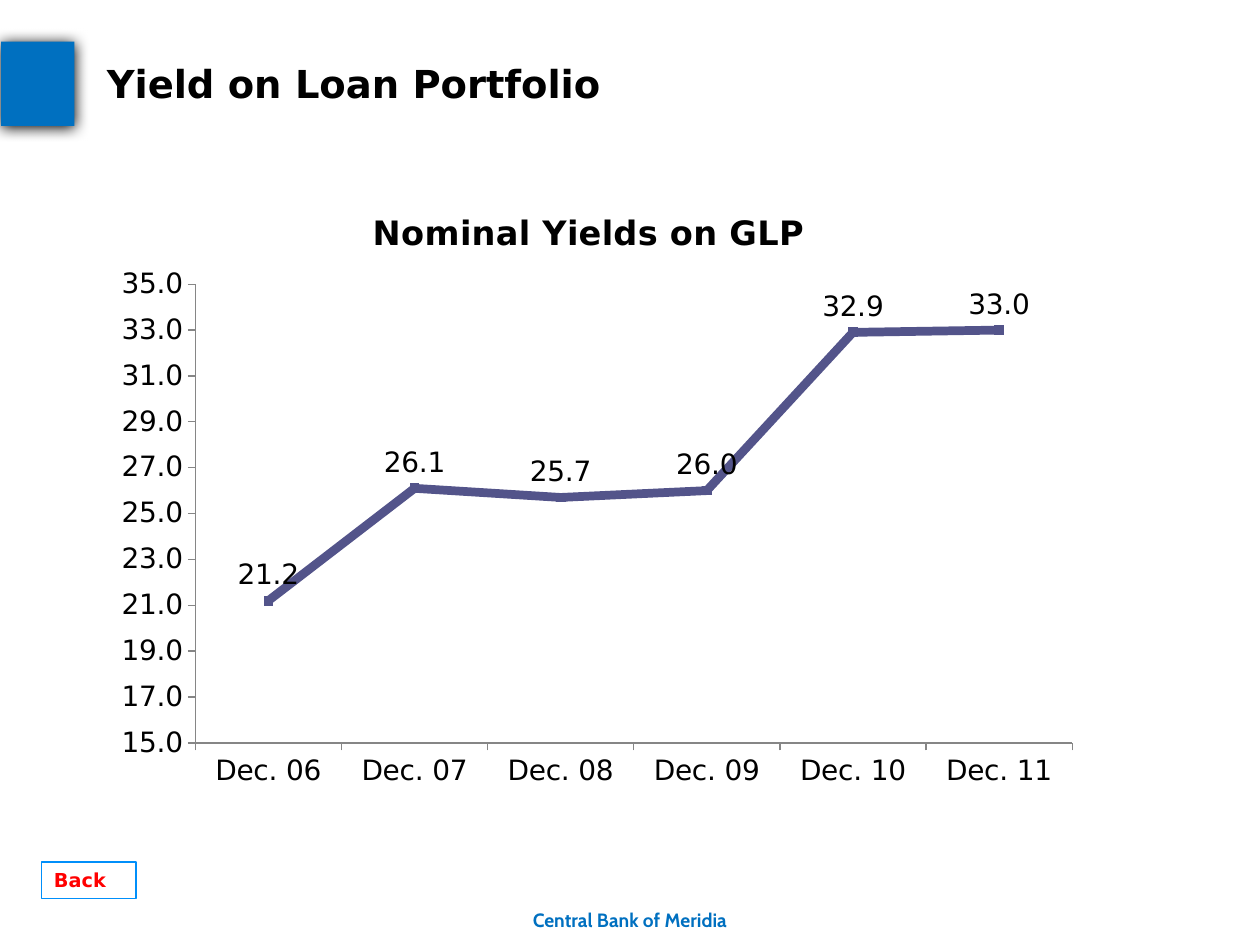
from pptx import Presentation
from pptx.chart.data import CategoryChartData
from pptx.dml.color import RGBColor
from pptx.enum.chart import XL_CHART_TYPE as ChartType
from pptx.enum.chart import XL_LABEL_POSITION as LabelPosition
from pptx.enum.chart import XL_MARKER_STYLE as MarkerStyle
from pptx.enum.chart import XL_TICK_MARK as TickMark
from pptx.enum.shapes import MSO_SHAPE as ShapeType
from pptx.enum.text import MSO_ANCHOR as Anchor
from pptx.enum.text import PP_ALIGN as Align
from pptx.oxml import parse_xml
from pptx.oxml.ns import nsdecls
from pptx.util import Inches, Pt

FONT = "DejaVu Sans"
BLACK, BLUE, SERIES, AXIS = "000000", "0070C0", "53548A", "868686"
NUMBER_FORMAT = "#,##0.0"


def color(value):
    return RGBColor.from_string(value)


def style_font(font, size, value, bold=False, name=FONT):
    font.name, font.size, font.bold = name, Pt(size), bold
    font.color.rgb = color(value)


def add_rectangle(slide, box, fill=None, line=None):
    shape = slide.shapes.add_shape(ShapeType.RECTANGLE, *map(Inches, box))
    shape.shadow.inherit = False
    if fill:
        shape.fill.solid()
        shape.fill.fore_color.rgb = color(fill)
    else:
        shape.fill.background()
    if line:
        shape.line.color.rgb = color(line)
        shape.line.width = Pt(0.75)
    else:
        shape.line.fill.background()
    return shape


def write(shape, text, size, value, anchor, align=Align.LEFT, name=FONT):
    frame = shape.text_frame
    frame.word_wrap = True
    frame.vertical_anchor = anchor
    paragraph = frame.paragraphs[0]
    paragraph.alignment = align
    run = paragraph.add_run()
    run.text = text
    style_font(run.font, size, value, True, name)


def add_footer(slide, box):
    shape = add_rectangle(slide, box, fill="FFFFFF")
    shape.text_frame.margin_top = Inches(0.15)
    write(shape, "Central Bank of Meridia", 11, BLUE, Anchor.MIDDLE, Align.CENTER, "Cabin")


def add_header(slide, box):
    left, top, width, height = box
    # Blue square with a soft shadow
    square = add_rectangle(slide, (left, top, 0.58, height), fill=BLUE)
    effects = square._element.spPr.find("{*}effectLst")
    effects.append(parse_xml(
        f'<a:outerShdw {nsdecls("a")} blurRad="{Pt(8.5)}" dist="{Pt(1)}" dir="5400000" '
        'rotWithShape="0"><a:srgbClr val="000000"/></a:outerShdw>'))
    # Slide title
    title = slide.shapes.add_textbox(
        Inches(left + 0.74), Inches(top + 0.09), Inches(width - 0.74), Inches(0.47))
    write(title, "Yield on Loan Portfolio", 22, BLACK, Anchor.BOTTOM)


def add_back_button(slide, box):
    button = add_rectangle(slide, box, line="008FFA")
    write(button, "Back", 11, "FF0000", Anchor.MIDDLE)


def layout_xml(target="", **fractions):
    """Manual chart layout; fractions are shares of the chart's size."""
    modes = '<c:xMode val="edge"/><c:yMode val="edge"/>'
    values = "".join(f'<c:{key} val="{value}"/>' for key, value in fractions.items())
    return parse_xml(f'<c:layout {nsdecls("c")}><c:manualLayout>{target}{modes}{values}'
                     '</c:manualLayout></c:layout>')


def place_chart_parts(chart):
    title = chart._chartSpace.chart.find("{*}title")
    plot_area = chart._chartSpace.chart.plotArea
    for parent in (title, plot_area):
        for layout in parent.findall("{*}layout"):
            parent.remove(layout)
    title.find("{*}tx").addnext(layout_xml(x=0.28, y=0.04))
    plot_area.insert(0, layout_xml('<c:layoutTarget val="inner"/>',
                                   x=0.11, y=0.17, w=0.87, h=0.74))


def add_yield_chart(slide, box):
    name = "Nominal Yields on GLP"
    data = CategoryChartData(number_format=NUMBER_FORMAT)
    data.categories = [f"Dec. {year:02d}" for year in range(6, 12)]
    data.add_series(name, (21.2, 26.1, 25.7, 26.0, 32.9, 33.0))
    chart = slide.shapes.add_chart(ChartType.LINE_MARKERS, *map(Inches, box), data).chart
    style_font(chart.font, 16, BLACK)
    chart.has_legend = False

    # Chart title
    chart.has_title = True
    run = chart.chart_title.text_frame.paragraphs[0].add_run()
    run.text = name
    style_font(run.font, 19.2, BLACK, True)
    chart.chart_title.include_in_layout = False

    # Axes
    for axis in (chart.category_axis, chart.value_axis):
        axis.has_major_gridlines = False
        axis.major_tick_mark = TickMark.OUTSIDE
        axis.minor_tick_mark = TickMark.NONE
        axis.format.line.color.rgb = color(AXIS)
        axis.format.line.width = Pt(0.75)
    value_axis = chart.value_axis
    value_axis.minimum_scale, value_axis.maximum_scale = 15, 35
    value_axis.major_unit = 2
    value_axis.tick_labels.number_format = NUMBER_FORMAT
    value_axis.tick_labels.number_format_is_linked = False

    # Line, markers and value labels
    plot = chart.plots[0]
    plot.vary_by_categories = False
    series = plot.series[0]
    series.smooth = False
    series.format.line.color.rgb = color(SERIES)
    series.format.line.width = Pt(5)
    series.marker.style = MarkerStyle.SQUARE
    series.marker.size = 5
    series.marker.format.fill.solid()
    series.marker.format.fill.fore_color.rgb = color(SERIES)
    series.marker.format.line.color.rgb = color(SERIES)
    labels = series.data_labels
    labels.show_value = True
    labels.position = LabelPosition.ABOVE
    labels.number_format = NUMBER_FORMAT
    labels.number_format_is_linked = False
    style_font(labels.font, 16, BLACK)

    place_chart_parts(chart)


def main():
    presentation = Presentation()
    presentation.slide_width, presentation.slide_height = Inches(10), Inches(7.5)
    slide = presentation.slides.add_slide(presentation.slide_layouts[6])
    add_footer(slide, (0, 7, 10, 0.5))
    add_header(slide, (0.01, 0.33, 8.74, 0.67))
    add_back_button(slide, (0.33, 6.84, 0.75, 0.29))
    add_yield_chart(slide, (0.67, 1.42, 8, 4.92))
    presentation.save("out.pptx")


if __name__ == "__main__":
    main()
